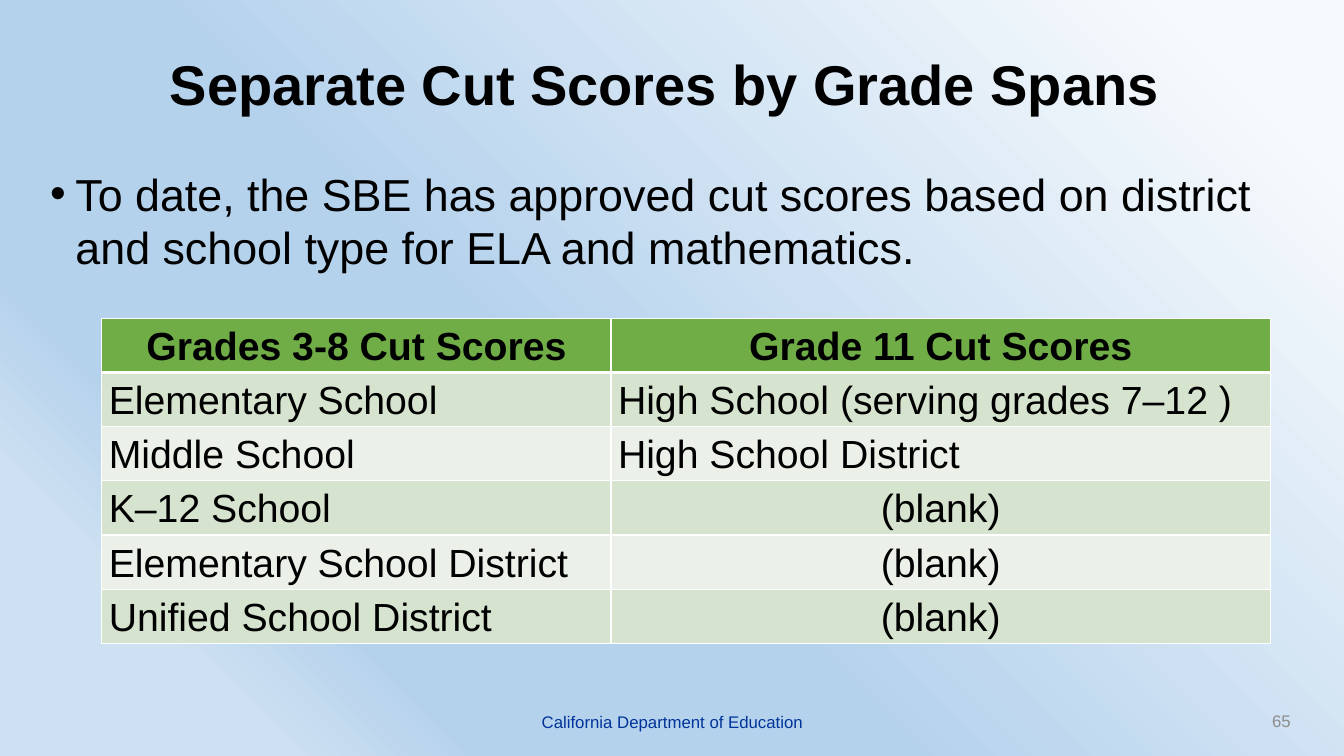
from lxml.etree import SubElement, fromstring
from pptx import Presentation
from pptx.dml.color import RGBColor
from pptx.enum.text import MSO_ANCHOR, MSO_AUTO_SIZE, PP_ALIGN
from pptx.oxml.ns import nsdecls, qn
from pptx.util import Inches, Pt

COLORS = {
    "text": "000000", "footer": "003399", "number": "8C8C8C",
    "header": "70AD47", "band_dark": "D5E3CF", "band_light": "EBF1E9",
    "border": "FFFFFF",
}
BACKGROUND_STOPS = [(8, "F7FAFD"), (57, "B5D2EC"), (77, "B5D2EC"), (87, "CEE1F2")]
CUT_SCORES = [
    ("Grades 3-8 Cut Scores", "Grade 11 Cut Scores"),
    ("Elementary School", "High School (serving grades 7–12 )"),
    ("Middle School", "High School District"),
    ("K–12 School", "(blank)"),
    ("Elementary School District", "(blank)"),
    ("Unified School District", "(blank)"),
]


class SlideBuilder:
    font_name = "Arial"

    def __init__(self, slide):
        self.slide = slide

    def background(self, stops):
        fill = self.slide.background.fill
        fill.gradient()
        fill.gradient_angle = 225
        stop_list = fill.gradient_stops[0]._gs.getparent()
        for stop in list(stop_list):
            stop_list.remove(stop)
        for percent, color in stops:
            stop = SubElement(stop_list, qn("a:gs"), pos=str(percent * 1000))
            SubElement(stop, qn("a:srgbClr"), val=color)

    def add_words(self, frame, text, size, color="text", bold=False,
                  align=PP_ALIGN.LEFT):
        paragraph = frame.paragraphs[0]
        paragraph.alignment = align
        run = paragraph.add_run()
        run.text = text
        run.font.name = self.font_name
        run.font.size = Pt(size)
        run.font.bold = bold
        run.font.color.rgb = RGBColor.from_string(COLORS[color])
        return paragraph

    def title(self, text, left, top, width, height):
        title = self.slide.shapes.title
        title.left, title.top = Inches(left), Inches(top)
        title.width, title.height = Inches(width), Inches(height)
        frame = title.text_frame
        frame.auto_size = MSO_AUTO_SIZE.NONE
        frame.vertical_anchor = MSO_ANCHOR.MIDDLE
        paragraph = self.add_words(frame, text, 40, bold=True, align=PP_ALIGN.CENTER)
        paragraph.line_spacing = 0.9

    def text(self, text, left, top, width, height, size,
             anchor=MSO_ANCHOR.MIDDLE, **style):
        box = self.slide.shapes.add_textbox(
            Inches(left), Inches(top), Inches(width), Inches(height))
        frame = box.text_frame
        frame.word_wrap = True
        frame.vertical_anchor = anchor
        return self.add_words(frame, text, size, **style)

    def bullet(self, text, left, top, width, height):
        paragraph = self.text(text, left, top, width, height, 32, MSO_ANCHOR.TOP)
        paragraph.space_before = Pt(12)
        properties = paragraph._p.get_or_add_pPr()
        properties.set("marL", str(Inches(0.25)))
        properties.set("indent", str(-Inches(0.25)))
        SubElement(properties, qn("a:buFont"), typeface=self.font_name)
        SubElement(properties, qn("a:buChar"), char="•")

    def borders(self, cell, top, bottom):
        """Outline a cell; top and bottom are line widths in points."""
        properties = cell._tc.get_or_add_tcPr()
        for index, (side, width) in enumerate(
                [("L", 1), ("R", 1), ("T", top), ("B", bottom)]):
            properties.insert(index, fromstring(
                f'<a:ln{side} {nsdecls("a")} w="{Pt(width)}"><a:solidFill>'
                f'<a:srgbClr val="{COLORS["border"]}"/></a:solidFill></a:ln{side}>'))

    def table(self, rows, left, top, column_widths, row_height):
        table = self.slide.shapes.add_table(
            len(rows), len(column_widths), Inches(left), Inches(top),
            Inches(sum(column_widths)), Inches(row_height * len(rows))).table
        for column, width in zip(table.columns, column_widths):
            column.width = Inches(width)
        for row_index, row in enumerate(rows):
            is_header = row_index == 0
            band = "band_dark" if row_index % 2 else "band_light"
            for column_index, text in enumerate(row):
                cell = table.cell(row_index, column_index)
                cell.margin_left = cell.margin_right = Inches(0.07)
                cell.margin_top = cell.margin_bottom = 0
                cell.fill.solid()
                cell.fill.fore_color.rgb = RGBColor.from_string(
                    COLORS["header" if is_header else band])
                self.borders(cell, top=3 if row_index == 1 else 1,
                             bottom=3 if is_header else 1)
                centered = is_header or text == "(blank)"
                paragraph = self.add_words(
                    cell.text_frame, text, 28, bold=is_header,
                    align=PP_ALIGN.CENTER if centered else PP_ALIGN.LEFT)
                paragraph.line_spacing = 1.15


def main():
    presentation = Presentation()
    presentation.slide_width = Inches(13.33)
    presentation.slide_height = Inches(7.5)
    title_only = presentation.slide_layouts[5]
    builder = SlideBuilder(presentation.slides.add_slide(title_only))
    builder.background(BACKGROUND_STOPS)
    builder.title("Separate Cut Scores by Grade Spans ", 0, 0, 13.33, 1.73)
    builder.bullet(
        "To date, the SBE has approved cut scores based on district and "
        "school type for ELA and mathematics.", 0.4, 1.6, 12.5, 1.41)
    builder.table(CUT_SCORES, 1.01, 3.16, [5.05, 6.54], 0.41)
    builder.text("California Department of Education", 4.42, 6.96, 4.5, 0.4, 12,
                 color="footer", align=PP_ALIGN.CENTER)
    builder.text("65", 9.9, 6.95, 3, 0.4, 12, color="number", align=PP_ALIGN.RIGHT)
    presentation.save("out.pptx")


if __name__ == "__main__":
    main()
